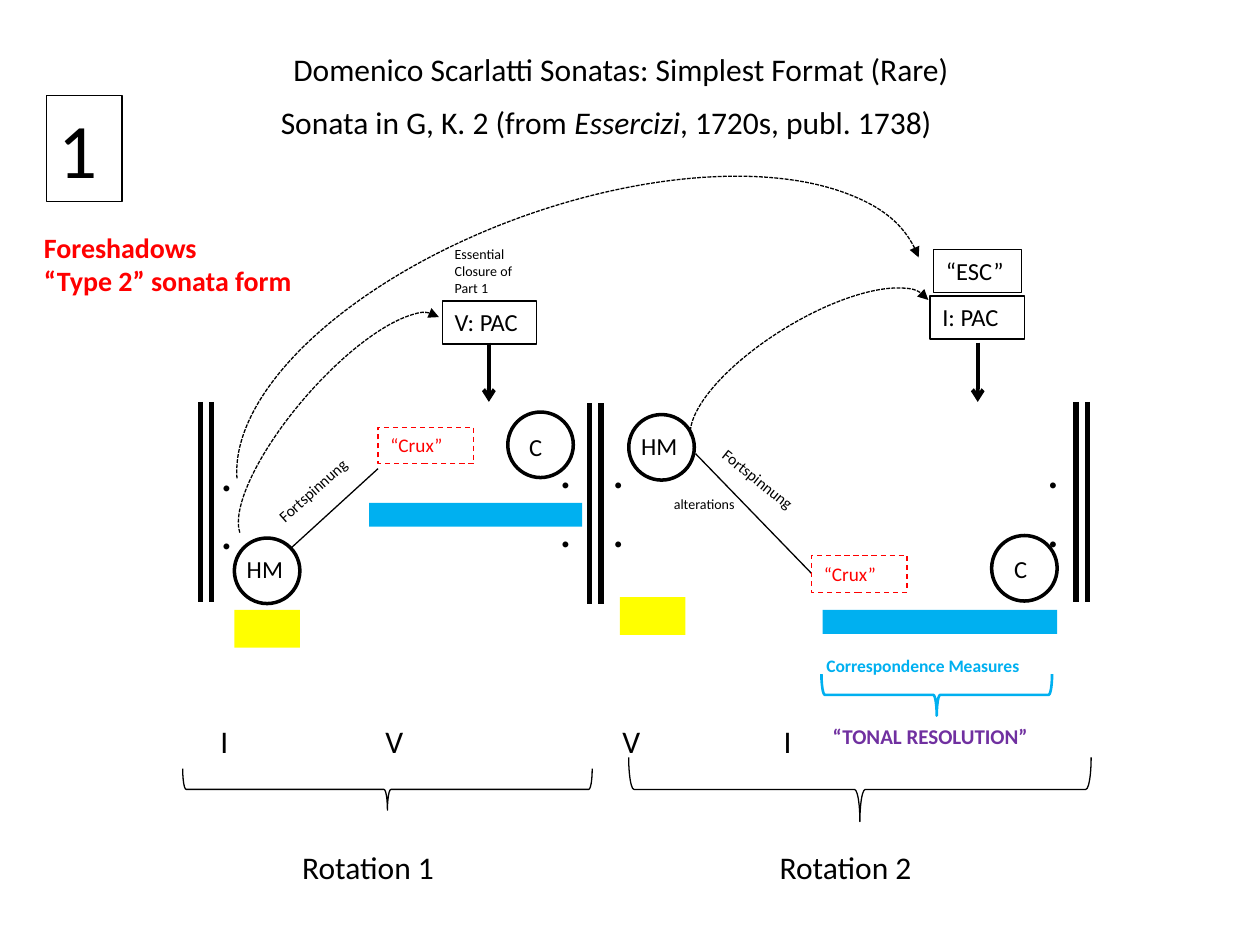
from dataclasses import dataclass

from lxml.etree import SubElement
from pptx import Presentation
from pptx.dml.color import RGBColor
from pptx.enum.dml import MSO_LINE
from pptx.enum.shapes import MSO_CONNECTOR, MSO_SHAPE
from pptx.enum.text import MSO_ANCHOR, MSO_AUTO_SIZE, PP_ALIGN
from pptx.oxml.ns import qn
from pptx.util import Inches, Pt


@dataclass(frozen=True)
class Theme:
    font: str = "Calibri"
    black: str = "000000"
    red: str = "FF0000"
    blue: str = "00B0F0"
    yellow: str = "FFFF00"
    purple: str = "7030A0"
    number: int = 44
    dots: int = 28
    title: int = 18
    lead: int = 16
    label: int = 14
    resolution: int = 12
    crux: int = 11
    measures: int = 10
    slope: int = 9
    small: int = 8
    thin: float = 0.75
    brace: float = 1.5
    ring: float = 2
    arrow: float = 2.25
    bar: float = 3


T = Theme()


def style_line(line, color, width, dash=None, tail=None):
    line.color.rgb = RGBColor.from_string(color)
    line.width = Pt(width)
    if dash:
        line.dash_style = dash
    if tail:
        SubElement(line._get_or_add_ln(), qn("a:tailEnd"), type=tail)


def write(sp, paragraphs, size, color=T.black, bold=False, tabs=()):
    """Fill a shape with paragraphs, each a list of (text, italic) runs or a string."""
    tf = sp.text_frame
    tf.word_wrap = True
    tf.auto_size = MSO_AUTO_SIZE.SHAPE_TO_FIT_TEXT
    tf.vertical_anchor = MSO_ANCHOR.TOP
    for i, runs in enumerate(paragraphs):
        p = tf.add_paragraph() if i else tf.paragraphs[0]
        p.alignment = PP_ALIGN.LEFT
        if tabs:
            stops = SubElement(p._p.get_or_add_pPr(), qn("a:tabLst"))
            for pos in tabs:
                SubElement(stops, qn("a:tab"), pos=str(Inches(pos)), algn="l")
        for text, italic in [(runs, False)] if isinstance(runs, str) else runs:
            r = p.add_run()
            r.text = text
            r.font.name = T.font
            r.font.size = Pt(size)
            r.font.bold = bold
            r.font.italic = italic
            r.font.color.rgb = RGBColor.from_string(color)


class Region:
    """Draws parts at offsets from its own top-left corner."""

    def __init__(self, s, x, y):
        self.shapes, self.x, self.y = s.shapes, x, y

    def place(self, x, y):
        return Inches(self.x + x), Inches(self.y + y)

    def text(self, x, y, w, h, paragraphs, size, rotation=0, **style):
        sp = self.shapes.add_textbox(*self.place(x, y), Inches(w), Inches(h))
        sp.rotation = rotation
        write(sp, paragraphs, size, **style)

    def shape(self, kind, x, y, w, h, fill=None, line=T.black, width=T.thin,
              dash=None, tail=None, rotation=0):
        sp = self.shapes.add_shape(kind, *self.place(x, y), Inches(w), Inches(h))
        sp.shadow.inherit = False
        sp.rotation = rotation
        if fill:
            sp.fill.solid()
            sp.fill.fore_color.rgb = RGBColor.from_string(fill)
            sp.line.fill.background()
        else:
            sp.fill.background()
            style_line(sp.line, line, width, dash, tail)
        return sp

    def line(self, x1, y1, x2, y2, width=T.thin, tail=None):
        c = self.shapes.add_connector(MSO_CONNECTOR.STRAIGHT, *self.place(x1, y1), *self.place(x2, y2))
        style_line(c.line, T.black, width, tail=tail)
        SubElement(c._element.spPr, qn("a:effectLst"))

    def block(self, x, y, w, h, color):
        self.shape(MSO_SHAPE.RECTANGLE, x, y, w, h, fill=color)

    def framed(self, x, y, w, h, text, size=T.label):
        write(self.shape(MSO_SHAPE.RECTANGLE, x, y, w, h), [text], size)

    def crux(self, x, y):
        sp = self.shape(MSO_SHAPE.RECTANGLE, x, y, 0.76, 0.29, line=T.red, dash=MSO_LINE.DASH)
        write(sp, ["“Crux”"], T.crux, T.red)

    def circle(self, x, y, text, dx, dy):
        self.shape(MSO_SHAPE.OVAL, x, y, 0.52, 0.52, width=T.ring)
        self.text(x + dx, y + dy, 0.52, 0.34, [text], T.label)

    def arc(self, x, y, w, h, rotation):
        sp = self.shape(MSO_SHAPE.ARC, x, y, w, h, dash=MSO_LINE.SQUARE_DOT,
                        tail="triangle", rotation=rotation)
        sp.adjustments[0] = 110.207
        sp.adjustments[1] = 0

    def brace(self, x, y, w, h, color=T.black, width=T.thin):
        """Brace pointing down that spans the given upright box."""
        self.shape(MSO_SHAPE.LEFT_BRACE, x + (w - h) / 2, y + (h - w) / 2, h, w,
                   line=color, width=width, rotation=270)

    def double_bar(self, x, y):
        for bar_x in (x, x + 0.09):
            self.line(bar_x, y, bar_x, y + 1.59, T.bar)

    def repeat_dots(self, x, y):
        self.text(x, y, 0.42, 1.04, [".", "."], T.dots)

    def cadence_arrow(self, x, y):
        self.line(x, y, x, y + 0.47, T.arrow, "arrow")


def heading(s, x, y):
    r = Region(s, x, y)
    r.text(1.98, 0, 6.01, 0.4, ["Domenico Scarlatti Sonatas: Simplest Format (Rare)"], T.title)
    r.text(1.88, 0.42, 5.48, 0.4, [[("Sonata in G, K. 2 (from ", False), ("Essercizi", True),
                                   (", 1720s, publ. 1738)", False)]], T.title)
    r.framed(0.12, 0.41, 0.6, 0.84, "1", T.number)
    r.text(0, 1.43, 2.25, 0.64, ["Foreshadows", "“Type 2” sonata form"], T.lead,
           color=T.red, bold=True)


def first_rotation(s, x, y):
    r = Region(s, x, y)
    r.double_bar(0.09, 1.69)
    r.repeat_dots(0.15, 1.96)
    r.repeat_dots(2.84, 1.94)
    r.text(2.01, 0.4, 0.74, 0.5, ["Essential Closure of Part 1"], T.small)
    r.framed(2.01, 0.89, 0.75, 0.34, "V: PAC")
    r.cadence_arrow(2.38, 1.22)
    r.circle(0.36, 2.77, "HM", 0, 0.08)
    r.circle(2.53, 1.77, "C", 0.07, 0.11)
    r.line(0.81, 2.85, 1.5, 2.22)
    r.text(0.54, 2.25, 0.92, 0.25, ["Fortspinnung"], T.slope, rotation=318.3)
    r.crux(1.5, 1.89)
    r.arc(0.04, 1.52, 2.35, 0.77, 310.9)
    r.arc(0.25, 0.14, 5.71, 2.74, 340.2)
    r.block(0.36, 3.34, 0.52, 0.3, T.yellow)
    r.block(1.43, 2.49, 1.69, 0.19, T.blue)
    r.brace(-0.05, 4.6, 3.25, 0.33)


def second_rotation(s, x, y):
    r = Region(s, x, y)
    r.double_bar(0.18, 1.7)
    r.double_bar(4.04, 1.69)
    r.repeat_dots(0.26, 1.94)
    r.repeat_dots(3.71, 1.94)
    r.framed(2.91, 0.48, 0.7, 0.34, "“ESC”")
    r.framed(2.88, 0.85, 0.75, 0.34, "I: PAC")
    r.cadence_arrow(3.26, 1.22)
    r.circle(0.49, 1.79, "HM", 0, 0.08)
    r.circle(3.37, 2.75, "C", 0.08, 0.1)
    r.line(1.02, 2.1, 1.94, 3.05)
    r.text(1.07, 2.21, 0.97, 0.25, ["Fortspinnung"], T.slope, rotation=38.8)
    r.text(0.75, 2.38, 0.87, 0.24, ["alterations"], T.small)
    r.crux(1.94, 2.91)
    r.arc(0.84, 1.05, 2.19, 0.81, 328.4)
    r.block(0.42, 3.24, 0.52, 0.3, T.yellow)
    r.block(2.03, 3.34, 1.86, 0.19, T.blue)
    r.text(1.96, 3.65, 1.91, 0.27, ["Correspondence Measures"], T.measures, color=T.blue, bold=True)
    r.brace(2.02, 3.85, 1.83, 0.33, T.blue, T.brace)
    r.text(2.01, 4.19, 1.84, 0.3, ["“TONAL RESOLUTION”"], T.resolution, color=T.purple, bold=True)
    r.brace(0.49, 4.51, 3.67, 0.51)


def key_and_rotation_rows(s, x, y):
    r = Region(s, x, y)
    r.text(0.19, 0, 7.19, 0.4, ["I\tV\tV\tI"], T.title, tabs=(1.31, 3.19, 4.47))
    r.text(0, 1, 7.38, 0.4, ["\tRotation 1\tRotation 2"], T.title, tabs=(0.84, 4.63))


def main():
    prs = Presentation()
    prs.slide_width, prs.slide_height = Inches(10), Inches(7.5)
    s = prs.slides.add_slide(prs.slide_layouts[6])
    first_rotation(s, 1.5, 1.5)
    second_rotation(s, 4.5, 1.5)
    key_and_rotation_rows(s, 1.46, 5.68)
    heading(s, 0.25, 0.35)
    prs.save("out.pptx")


if __name__ == "__main__":
    main()
